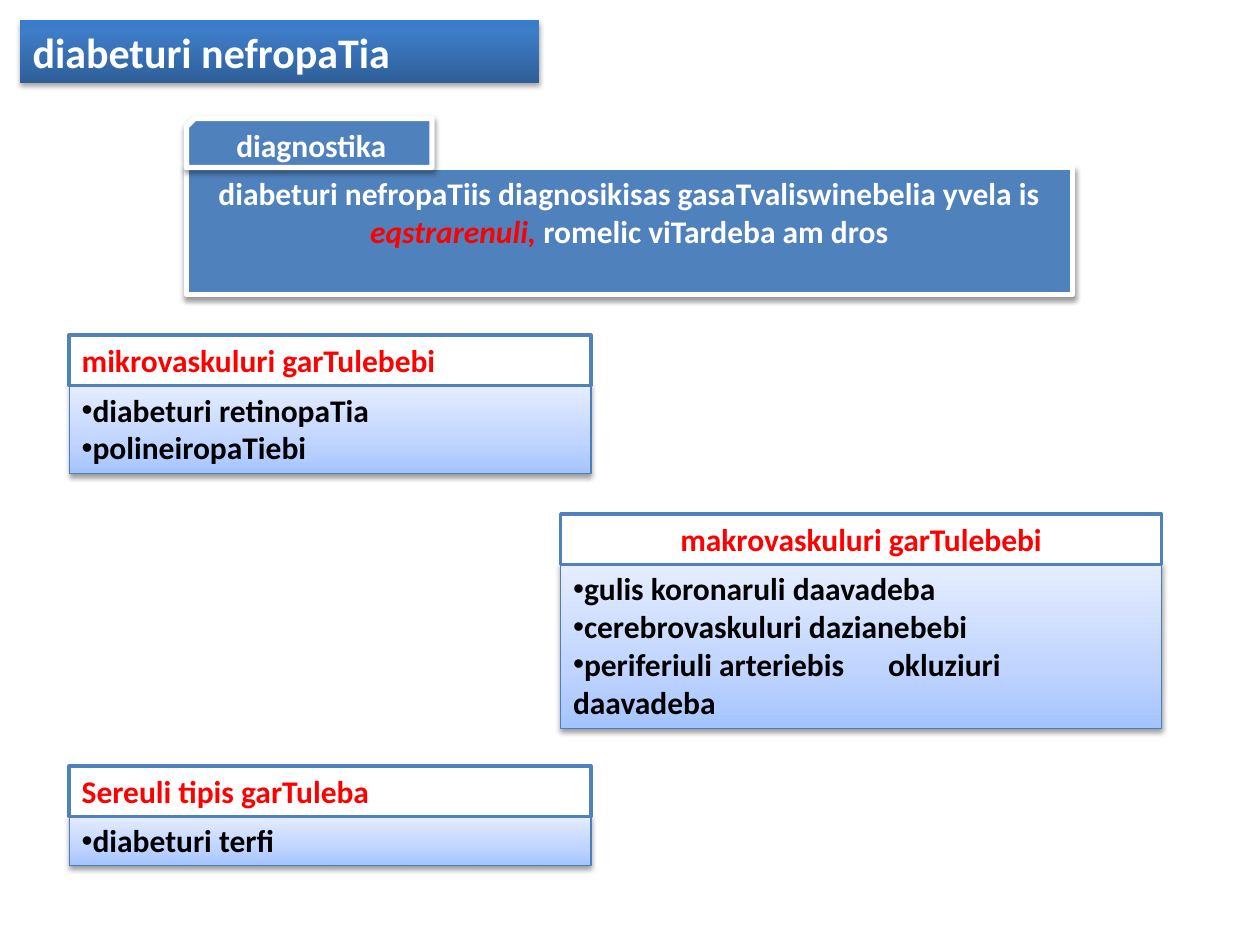
"""Build a slide on the diagnosis of diabetic nephropathy and its complications."""
import pptx
import pptx.dml.color
import pptx.enum.shapes
import pptx.enum.text
import pptx.oxml.ns
import pptx.util
from lxml import etree

COLOURS = {"white": "FFFFFF", "black": "000000", "red": "FF0000", "blue": "4F81BD", "edge": "4B7EBC"}
GRADIENTS = {
    "title": [(0, "2F5F99"), (80, "3D7CC7"), (100, "3A7CCB")],
    "panel": [(0, "A4C4FF"), (35, "BFD4FF"), (100, "E6EEFF")],
}
FONT = "Calibri"
SLIDE_WIDTH, SLIDE_HEIGHT = 10, 7.5
HEADER_HEIGHT = 0.4
HEADER_STEP = 0.39
COLUMNS = {"left": (0.55, 4.14), "right": (4.45, 4.77)}

TITLE = "diabeturi nefropaTia"
TAB = "diagnostika"
DIAGNOSIS = [
    ("diabeturi nefropaTiis diagnosikisas gasaTvaliswinebelia yvela is ", "white", False),
    ("eqstrarenuli, ", "red", True),
    ("romelic viTardeba am dros", "white", False),
]
CARDS = [
    {"column": "left", "top": 2.66, "height": 0.71, "wrap": False, "align": "LEFT",
     "header": "mikrovaskuluri garTulebebi",
     "items": ["diabeturi retinopaTia", "polineiropaTiebi"]},
    {"column": "right", "top": 4.08, "height": 1.31, "wrap": True, "align": "CENTER",
     "header": "makrovaskuluri garTulebebi",
     "items": ["gulis koronaruli daavadeba", "cerebrovaskuluri dazianebebi",
               "periferiuli arteriebis \tokluziuri daavadeba"]},
    {"column": "left", "top": 6.08, "height": 0.4, "wrap": True, "align": "LEFT",
     "header": "Sereuli tipis garTuleba",
     "items": ["diabeturi terfi"]},
]


def rgb(name):
    return pptx.dml.color.RGBColor.from_string(COLOURS[name])


def add_child(parent, tag, **attributes):
    child = etree.SubElement(parent, pptx.oxml.ns.qn(tag))
    for name, value in attributes.items():
        child.set(name, str(value))
    return child


def paint_gradient(shape, stops):
    shape.fill.gradient()
    shape.fill.gradient_angle = 90
    stop_list = shape._element.spPr.find(".//" + pptx.oxml.ns.qn("a:gsLst"))
    for stop in list(stop_list):
        stop_list.remove(stop)
    for position, colour in stops:
        stop = add_child(stop_list, "a:gs", pos=position * 1000)
        add_child(stop, "a:srgbClr", val=colour)


def add_shadow(shape, opacity, distance):
    effects = shape._element.spPr.find(pptx.oxml.ns.qn("a:effectLst"))
    shadow = add_child(effects, "a:outerShdw", blurRad=pptx.util.Pt(3.1), dist=pptx.util.Pt(distance),
                       dir=5400000, rotWithShape=0)
    add_child(add_child(shadow, "a:srgbClr", val=COLOURS["black"]), "a:alpha", val=opacity * 1000)


def add_box(slide, place, fill, line=None, shadow=None, preset="RECTANGLE"):
    kind = getattr(pptx.enum.shapes.MSO_SHAPE, preset)
    shape = slide.shapes.add_shape(kind, *(pptx.util.Inches(length) for length in place))
    if fill in GRADIENTS:
        paint_gradient(shape, GRADIENTS[fill])
    else:
        shape.fill.solid()
        shape.fill.fore_color.rgb = rgb(fill)
    if line:
        shape.line.color.rgb = rgb(line[0])
        shape.line.width = pptx.util.Pt(line[1])
    else:
        shape.line.fill.background()
    shape.shadow.inherit = False
    if shadow:
        add_shadow(shape, *shadow)
    return shape


def write(shape, paragraphs, size=18, align="LEFT", anchor="TOP", wrap=True, grow=True, bullet=False):
    frame = shape.text_frame
    frame.word_wrap = wrap
    frame.vertical_anchor = getattr(pptx.enum.text.MSO_ANCHOR, anchor)
    if grow:
        frame.auto_size = pptx.enum.text.MSO_AUTO_SIZE.SHAPE_TO_FIT_TEXT
    for index, runs in enumerate(paragraphs):
        paragraph = frame.add_paragraph() if index else frame.paragraphs[0]
        paragraph.alignment = getattr(pptx.enum.text.PP_ALIGN, align)
        if bullet:
            properties = paragraph._p.get_or_add_pPr()
            add_child(properties, "a:buFont", typeface="Arial")
            add_child(properties, "a:buChar", char="•")
        for text, colour, italic in runs:
            run = paragraph.add_run()
            run.text = text
            run.font.name = FONT
            run.font.size = pptx.util.Pt(size)
            run.font.bold = True
            run.font.italic = italic
            run.font.color.rgb = rgb(colour)


def add_card(slide, card):
    left, width = COLUMNS[card["column"]]
    body = add_box(slide, (left, card["top"] + HEADER_STEP, width, card["height"]),
                   "panel", ("edge", 0.75), (38, 1.6))
    write(body, [[(item, "black", False)] for item in card["items"]], bullet=True)
    header = add_box(slide, (left, card["top"], width, HEADER_HEIGHT), "white", ("blue", 2))
    write(header, [[(card["header"], "red", False)]], align=card["align"], wrap=card["wrap"])


def main():
    presentation = pptx.Presentation()
    presentation.slide_width = pptx.util.Inches(SLIDE_WIDTH)
    presentation.slide_height = pptx.util.Inches(SLIDE_HEIGHT)
    slide = presentation.slides.add_slide(presentation.slide_layouts[6])

    diagnosis = add_box(slide, (1.48, 1.33, 7.03, 1.01), "blue", ("white", 3), (38, 1.6))
    write(diagnosis, [DIAGNOSIS], align="CENTER")
    for card in CARDS:
        add_card(slide, card)
    title = add_box(slide, (0.16, 0.16, 4.12, 0.5), "title", shadow=(35, 1.8))
    write(title, [[(TITLE, "white", False)]], size=24, wrap=False)
    tab = add_box(slide, (1.48, 0.94, 1.95, 0.39), "blue", ("white", 3), (38, 1.6), "SNIP_1_RECTANGLE")
    tab._element.spPr.xfrm.set("flipH", "1")
    write(tab, [[(TAB, "white", False)]], align="CENTER", anchor="MIDDLE", grow=False)

    presentation.save("out.pptx")


if __name__ == "__main__":
    main()
